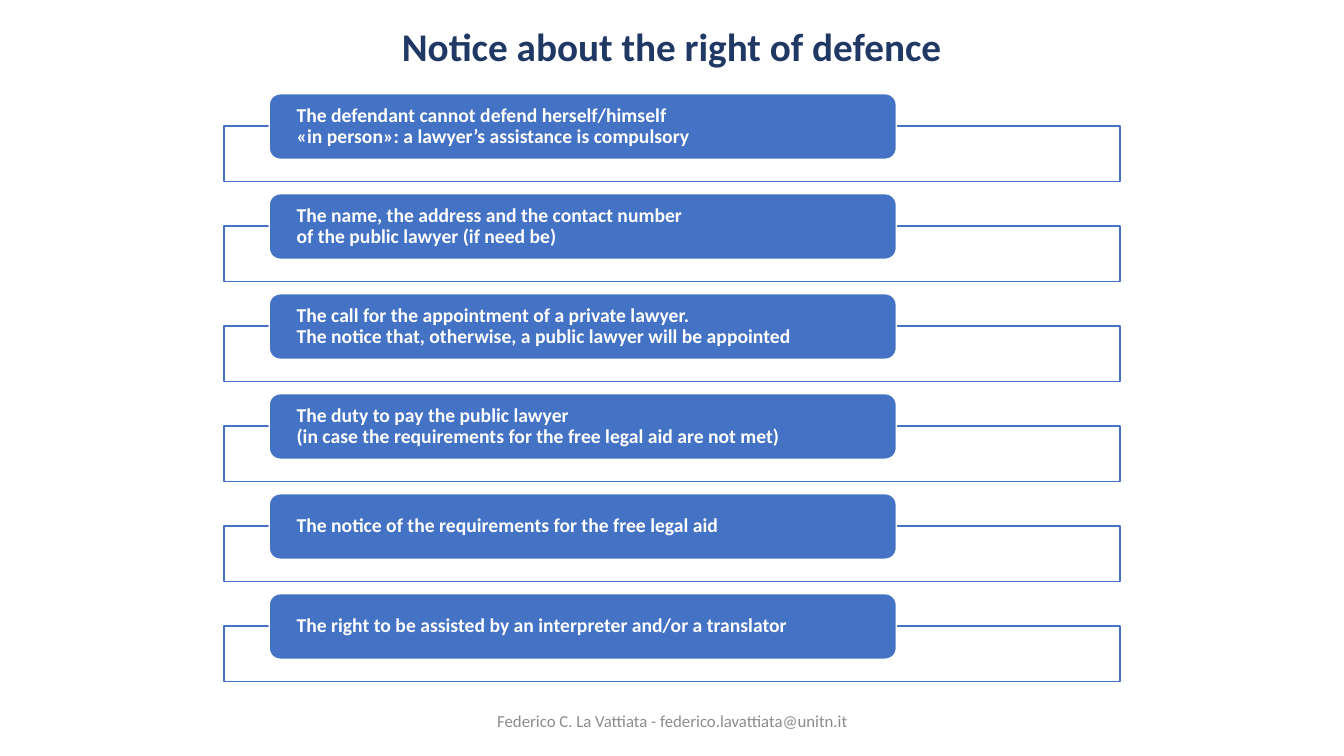
from dataclasses import dataclass

import pptx
import pptx.dml.color
import pptx.enum.shapes
import pptx.enum.text
import pptx.oxml.ns
import pptx.util
from lxml import etree
from pptx.util import Inches

TITLE = "Notice about the right of defence"
FOOTER = "Federico C. La Vattiata - federico.lavattiata@unitn.it"
NOTICES = [
    "The defendant cannot defend herself/himself\n«in person»: a lawyer’s assistance is compulsory",
    "The name, the address and the contact number\nof the public lawyer (if need be)",
    "The call for the appointment of a private lawyer.\n"
    "The notice that, otherwise, a public lawyer will be appointed",
    "The duty to pay the public lawyer\n(in case the requirements for the free legal aid are not met)",
    "The notice of the requirements for the free legal aid",
    "The right to be assisted by an interpreter and/or a translator",
]


@dataclass(frozen=True)
class Theme:
    font: str = "Calibri"
    navy: str = "203864"
    blue: str = "4472C4"
    white: str = "FFFFFF"
    grey: str = "8C8C8C"
    title_size: int = 28
    notice_size: int = 14
    footer_size: int = 12
    line_width: int = 1


THEME = Theme()
FIRST_TOP, STEP = 0.93, 0.992
FRAME_LEFT, FRAME_DROP, FRAME_WIDTH, FRAME_HEIGHT = 2.22, 0.32, 8.89, 0.55
LABEL_LEFT, LABEL_WIDTH, LABEL_HEIGHT = 2.67, 6.22, 0.65


def color(value):
    return pptx.dml.color.RGBColor.from_string(value)


def write_text(box, text, size, ink, bold=False, align="CENTER", inset=0.1, margin=0.05, spacing=1.0):
    frame = box.text_frame
    frame.word_wrap = True
    frame.auto_size = pptx.enum.text.MSO_AUTO_SIZE.NONE
    frame.vertical_anchor = pptx.enum.text.MSO_ANCHOR.MIDDLE
    frame.margin_left = frame.margin_right = Inches(inset)
    frame.margin_top = frame.margin_bottom = Inches(margin)
    para = frame.paragraphs[0]
    para.text = text
    para.alignment = pptx.enum.text.PP_ALIGN[align]
    para.line_spacing = spacing
    for span in para.runs:
        span.font.name = THEME.font
        span.font.size = pptx.util.Pt(size)
        span.font.bold = bold
        span.font.color.rgb = color(ink)
    for line_break in para._p.findall(pptx.oxml.ns.qn("a:br")):
        etree.SubElement(line_break, pptx.oxml.ns.qn("a:rPr"), sz=str(size * 100))


def add_panel(page, kind, left, top, width, height, fill, line):
    panel = page.shapes.add_shape(
        pptx.enum.shapes.MSO_SHAPE[kind], Inches(left), Inches(top), Inches(width), Inches(height)
    )
    panel.shadow.inherit = False
    panel.fill.solid()
    panel.fill.fore_color.rgb = color(fill)
    panel.line.color.rgb = color(line)
    panel.line.width = pptx.util.Pt(THEME.line_width)
    return panel


def add_notice(page, top, text):
    frame = add_panel(
        page, "RECTANGLE", FRAME_LEFT, top + FRAME_DROP, FRAME_WIDTH, FRAME_HEIGHT, THEME.white, THEME.blue
    )
    fill = frame._element.spPr.find(pptx.oxml.ns.qn("a:solidFill"))
    etree.SubElement(fill[0], pptx.oxml.ns.qn("a:alpha"), val="90000")
    label = add_panel(
        page, "ROUNDED_RECTANGLE", LABEL_LEFT, top, LABEL_WIDTH, LABEL_HEIGHT, THEME.blue, THEME.white
    )
    write_text(
        label, text, THEME.notice_size, THEME.white,
        bold=True, align="LEFT", inset=0.24, margin=0.03, spacing=0.9,
    )


def main():
    deck = pptx.Presentation()
    deck.slide_width, deck.slide_height = Inches(13.33), Inches(7.5)
    page = deck.slides.add_slide(deck.slide_layouts[5])

    title = page.shapes.title
    title.left, title.top = Inches(0.72), Inches(0.17)
    title.width, title.height = Inches(11.88), Inches(0.57)
    write_text(title, TITLE, THEME.title_size, THEME.navy, bold=True)

    for index, text in enumerate(NOTICES):
        add_notice(page, FIRST_TOP + index * STEP, text)

    footer = page.shapes.add_textbox(Inches(4.42), Inches(6.95), Inches(4.5), Inches(0.4))
    write_text(footer, FOOTER, THEME.footer_size, THEME.grey)

    deck.save("out.pptx")


if __name__ == "__main__":
    main()
